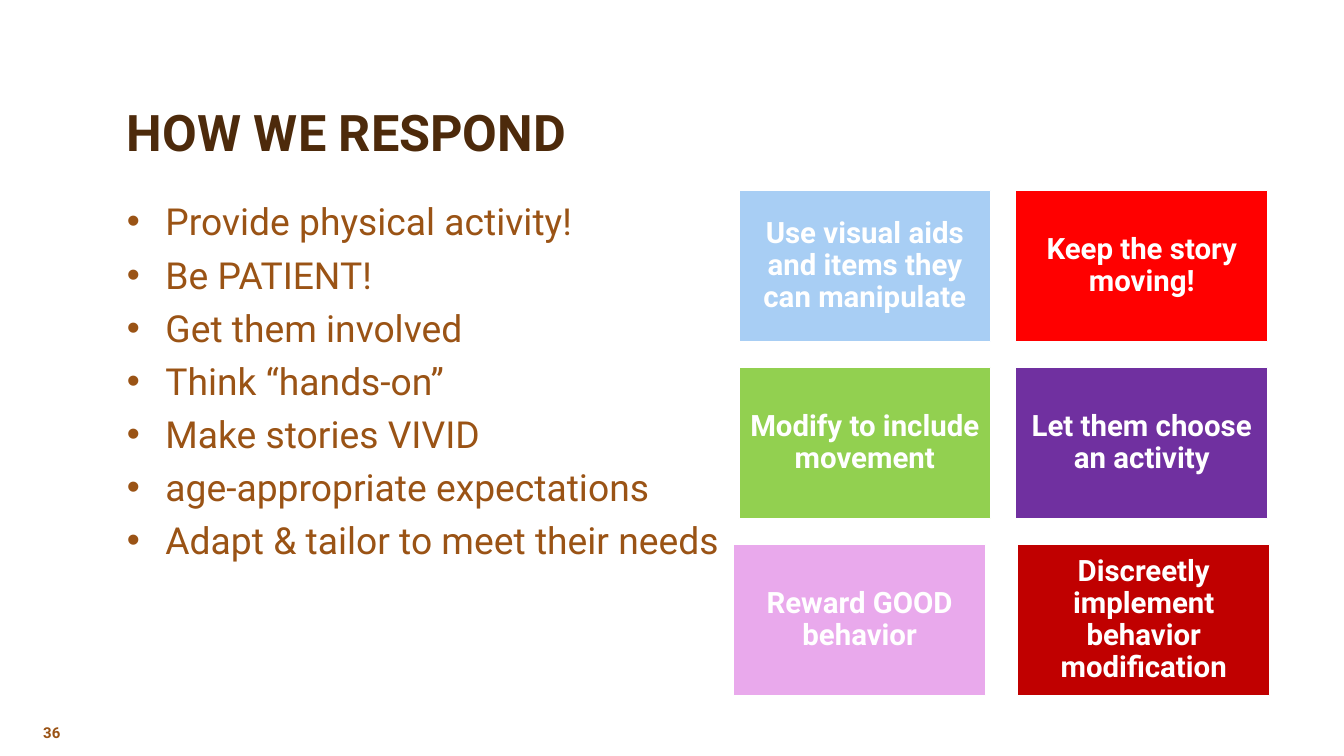
from lxml import etree
from pptx import Presentation
from pptx import util as u
from pptx.dml.color import RGBColor
from pptx.enum import shapes, text
from pptx.oxml import ns

COLORS = {
    "title": "4D2A0B", "body": "9A5315", "white": "FFFFFF",
    "blue": "A8CEF4", "red": "FF0000", "green": "92D050",
    "purple": "7030A0", "pink": "E9A9EC", "crimson": "C00000",
}


def style(paragraph, size, color, bold=False):
    paragraph.font.name = "Roboto"
    paragraph.font.size = u.Pt(size)
    paragraph.font.bold = bold
    paragraph.font.color.rgb = RGBColor.from_string(COLORS[color])


def add_text_frame(left, top, width, height, anchor):
    box = slide.shapes.add_textbox(u.Cm(left), u.Cm(top), u.Cm(width), u.Cm(height))
    box.text_frame.word_wrap = True
    box.text_frame.vertical_anchor = anchor
    return box.text_frame


deck = Presentation()
deck.slide_width, deck.slide_height = u.Cm(33.87), u.Cm(19.05)
slide = deck.slides.add_slide(deck.slide_layouts[6])

page_number = add_text_frame(0.84, 18.14, 2.11, 0.64, text.MSO_ANCHOR.MIDDLE).paragraphs[0]
page_number.text = "36"
style(page_number, 10.67, "body", bold=True)

title = add_text_frame(2.95, 0.84, 27.94, 3.38, text.MSO_ANCHOR.BOTTOM).paragraphs[0]
title.text = "HOW WE RESPOND"
title.line_spacing = 0.9
style(title, 36, "title", bold=True)

responses = [
    "Provide physical activity!",
    "Be PATIENT!",
    "Get them involved",
    "Think “hands-on”",
    "Make stories VIVID",
    "age-appropriate expectations",
    "Adapt & tailor to meet their needs",
]
response_list = add_text_frame(2.95, 4.88, 15.6, 12.12, text.MSO_ANCHOR.TOP)
for index, response in enumerate(responses):
    item = response_list.paragraphs[0] if index == 0 else response_list.add_paragraph()
    item.text = response
    properties = item._p.get_or_add_pPr()
    properties.set("marL", str(u.Cm(0.97)))
    properties.set("indent", str(-u.Cm(0.97)))
    etree.SubElement(properties, ns.qn("a:buFont")).set("typeface", "Arial")
    etree.SubElement(properties, ns.qn("a:buChar")).set("char", "•")
    if index:
        item.space_before = u.Pt(6)
    style(item, 26.67, "body")

tile_rows = [
    ((18.62, "blue", "Use visual aids and items they can manipulate"),
     (25.6, "red", "Keep the story moving!")),
    ((18.62, "green", "Modify to include movement"),
     (25.6, "purple", "Let them choose an activity")),
    ((18.49, "pink", "Reward GOOD behavior"),
     (25.65, "crimson", "Discreetly implement behavior modification")),
]
for row, tiles in enumerate(tile_rows):
    for left, color, strategy in tiles:
        tile = slide.shapes.add_shape(
            shapes.MSO_SHAPE.RECTANGLE,
            u.Cm(left), u.Cm(4.8 + 4.46 * row), u.Cm(6.35), u.Cm(3.81))
        tile.shadow.inherit = False
        tile.fill.solid()
        tile.fill.fore_color.rgb = RGBColor.from_string(COLORS[color])
        tile.line.color.rgb = RGBColor.from_string(COLORS["white"])
        tile.line.width = u.Pt(1)
        frame = tile.text_frame
        frame.word_wrap = True
        frame.vertical_anchor = text.MSO_ANCHOR.MIDDLE
        frame.margin_left = frame.margin_right = u.Cm(0.23)
        frame.margin_top = frame.margin_bottom = u.Cm(0.23)
        label = frame.paragraphs[0]
        label.text = strategy
        label.alignment = text.PP_ALIGN.CENTER
        label.line_spacing = 0.9
        style(label, 21, "white", bold=True)

deck.save("out.pptx")
